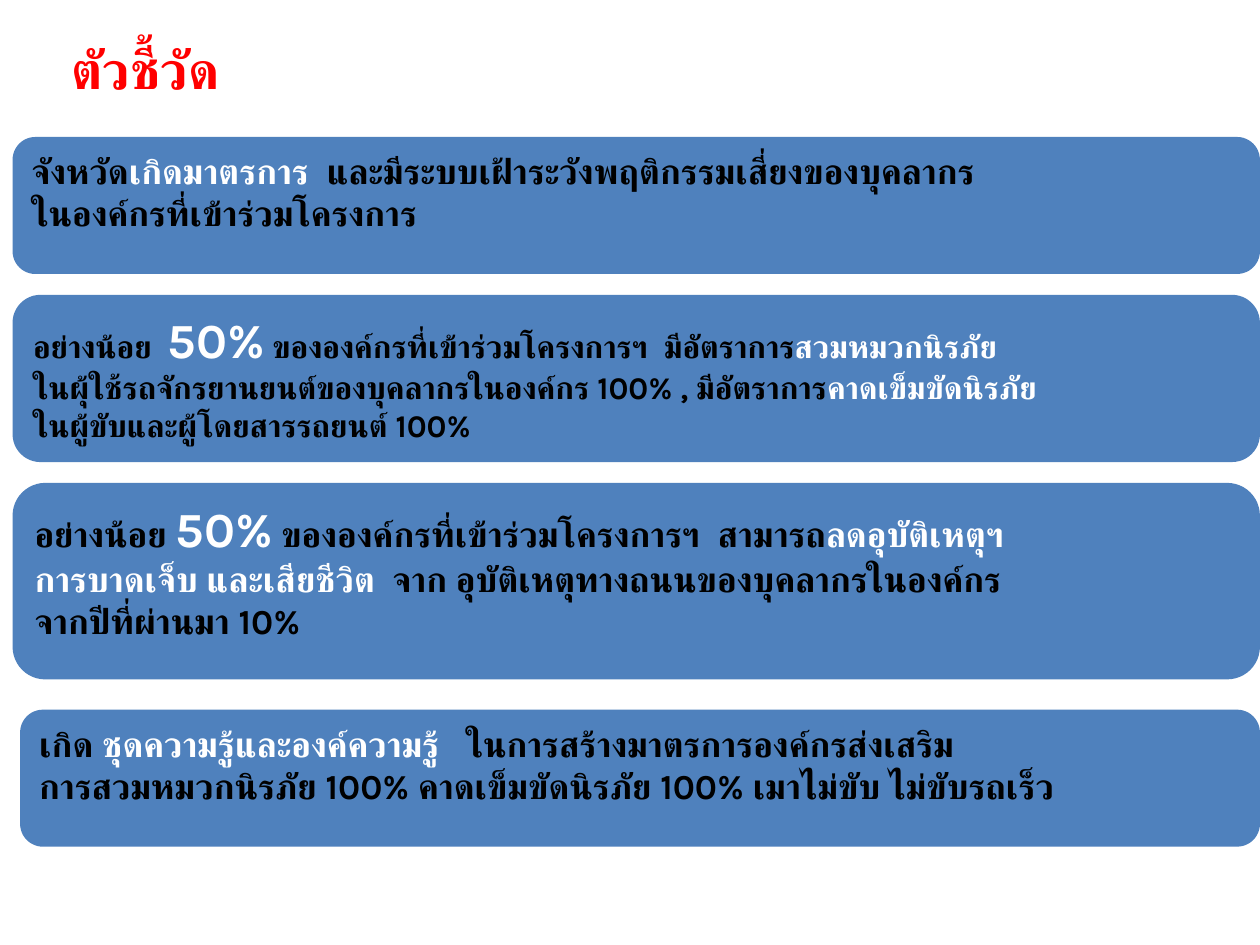
from dataclasses import dataclass

import pptx
import pptx.dml.color
import pptx.enum.shapes
import pptx.enum.text
import pptx.oxml
import pptx.oxml.ns
import pptx.util


@dataclass(frozen=True)
class Theme:
    font: str = "Karla"
    title: str = "FF0000"
    card: str = "4F81BD"
    ink: str = "000000"
    accent: str = "FFFFFF"
    title_size: int = 30
    body_size: int = 20
    compact_size: int = 18
    figure_size: int = 28


THEME = Theme()
WIDTH = pptx.util.Inches(10)
HEIGHT = pptx.util.Inches(7.5)


@dataclass(frozen=True)
class Span:
    text: str
    color: str = THEME.ink
    size: int | None = None


@dataclass(frozen=True)
class Card:
    left: float
    top: float
    height: float
    lines: list[list[Span]]
    size: int = THEME.body_size


def accent(text: str) -> Span:
    return Span(text, THEME.accent)


FIGURE = Span("50%", THEME.accent, THEME.figure_size)

CARDS = [
    Card(0.01, 0.145, 0.145, [
        [Span("จังหวัด"), accent("เกิดมาตรการ  "),
         Span("และมีระบบเฝ้าระวังพฤติกรรมเสี่ยงของบุคลากร")],
        [Span("ในองค์กรที่เข้าร่วมโครงการ")],
    ]),
    Card(0.01, 0.312, 0.177, [
        [Span("อย่างน้อย  "), FIGURE,
         Span(" ขององค์กรที่เข้าร่วมโครงการฯ  มีอัตราการ"), accent("สวมหมวกนิรภัย")],
        [Span("ในผุ้ใช้รถจักรยานยนต์ของบุคลากรในองค์กร 100% , มีอัตราการ"),
         accent("คาดเข็มขัดนิรภัย")],
        [Span("ในผู้ขับและผู้โดยสารรถยนต์ 100%")],
    ], THEME.compact_size),
    Card(0.01, 0.511, 0.208, [
        [Span("อย่างน้อย "), FIGURE,
         Span(" ขององค์กรที่เข้าร่วมโครงการฯ  สามารถ"), accent("ลดอุบัติเหตุฯ")],
        [accent("การบาดเจ็บ และเสียชีวิต  "),
         Span("จาก อุบัติเหตุทางถนนของบุคลากรในองค์กร")],
        [Span("จากปีที่ผ่านมา 10%")],
    ]),
    Card(0.016, 0.751, 0.145, [
        [Span("เกิด "), accent("ชุดความรู้และองค์ความรู้   "),
         Span("ในการสร้างมาตรการองค์กรส่งเสริม")],
        [Span("การสวมหมวกนิรภัย 100% คาดเข็มขัดนิรภัย 100% เมาไม่ขับ ไม่ขับรถเร็ว")],
    ]),
]


def color_of(value: str) -> pptx.dml.color.RGBColor:
    return pptx.dml.color.RGBColor.from_string(value)


def write_spans(para, spans: list[Span], size: int, align) -> None:
    para.alignment = align
    for span in spans:
        run = para.add_run()
        run.text = span.text
        run.font.name = THEME.font
        run.font.size = pptx.util.Pt(span.size or size)
        run.font.bold = True
        run.font.color.rgb = color_of(span.color)
        complex_script = pptx.oxml.parse_xml(
            f'<a:cs {pptx.oxml.ns.nsdecls("a")} typeface="{THEME.font}"/>')
        run.font._element.find(pptx.oxml.ns.qn("a:latin")).addnext(complex_script)


def write_lines(box, lines: list[list[Span]], size: int, align, anchor) -> None:
    frame = box.text_frame
    frame.word_wrap = True
    frame.vertical_anchor = anchor
    for index, spans in enumerate(lines):
        para = frame.add_paragraph() if index else frame.paragraphs[0]
        write_spans(para, spans, size, align)


def draw_title(page, text: str) -> None:
    box = page.shapes.add_textbox(
        int(WIDTH * 0.01), 0, int(WIDTH * 0.211), int(HEIGHT * 0.145))
    write_lines(box, [[Span(text, THEME.title)]], THEME.title_size,
                pptx.enum.text.PP_ALIGN.CENTER, pptx.enum.text.MSO_ANCHOR.MIDDLE)


def draw_card(page, card: Card) -> None:
    box = page.shapes.add_shape(
        pptx.enum.shapes.MSO_SHAPE.ROUNDED_RECTANGLE,
        int(WIDTH * card.left), int(HEIGHT * card.top),
        int(WIDTH * (1 - card.left)), int(HEIGHT * card.height))
    box.shadow.inherit = False
    box.fill.solid()
    box.fill.fore_color.rgb = color_of(THEME.card)
    box.line.fill.background()
    write_lines(box, card.lines, card.size,
                pptx.enum.text.PP_ALIGN.LEFT, pptx.enum.text.MSO_ANCHOR.TOP)


def main() -> None:
    deck = pptx.Presentation()
    deck.slide_width = WIDTH
    deck.slide_height = HEIGHT
    page = deck.slides.add_slide(deck.slide_layouts[6])
    draw_title(page, "ตัวชี้วัด")
    for card in CARDS:
        draw_card(page, card)
    deck.save("out.pptx")


if __name__ == "__main__":
    main()
